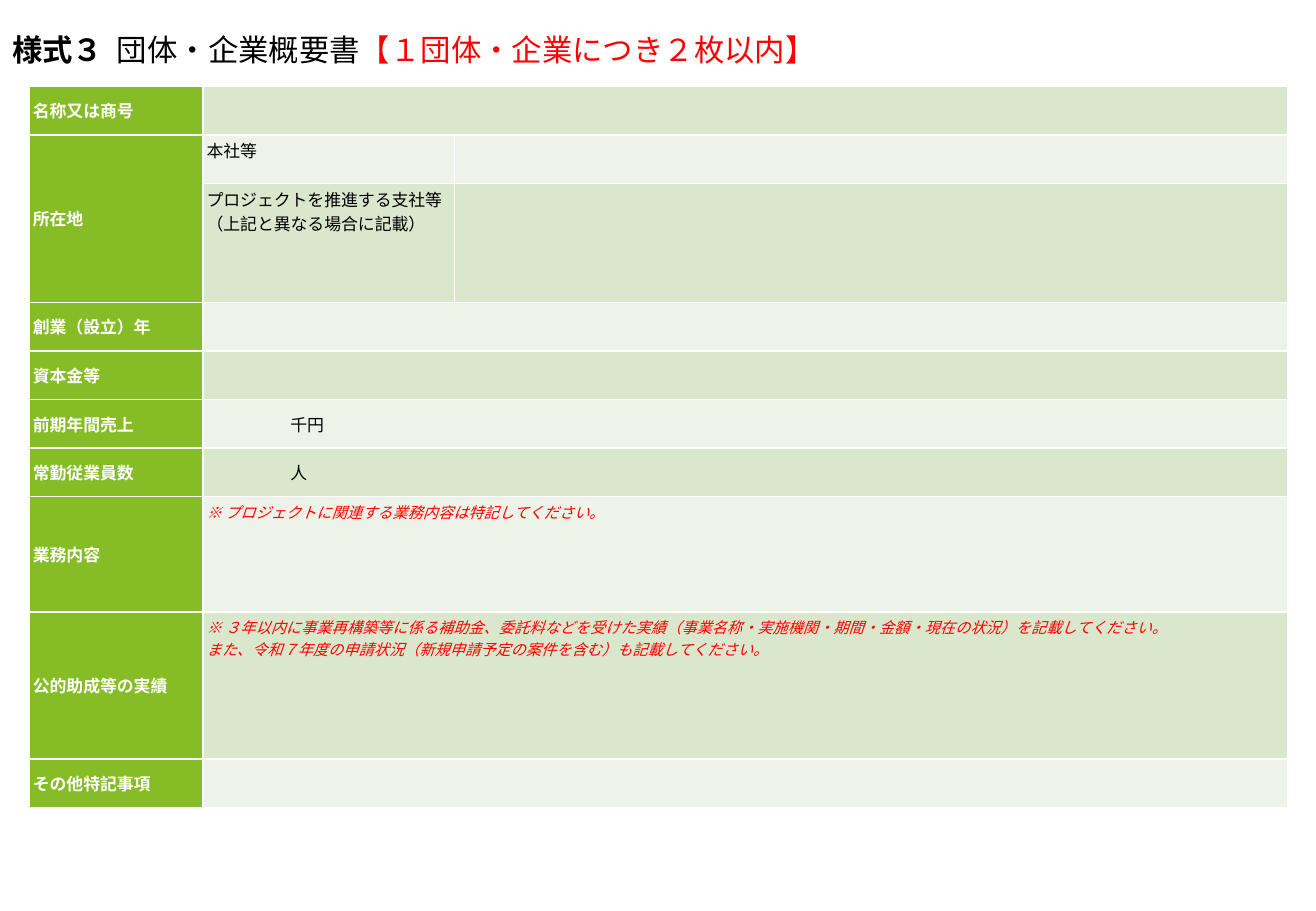
from lxml import etree
from pptx import Presentation
from pptx.dml.color import RGBColor
from pptx.enum.text import MSO_ANCHOR, PP_ALIGN
from pptx.oxml.ns import qn
from pptx.util import Inches, Pt

TOP, MIDDLE, BOTTOM = MSO_ANCHOR.TOP, MSO_ANCHOR.MIDDLE, MSO_ANCHOR.BOTTOM
LEFT, JUSTIFY = PP_ALIGN.LEFT, PP_ALIGN.JUSTIFY

FONT = "Noto Sans CJK JP"
BLACK, WHITE, RED, GREEN = "000000", "FFFFFF", "FF0000", "86BC25"
BANDS = ("D9E7CD", "EDF3E8")
COLUMN_WIDTHS = (1.43, 2.07, 6.86)
UNIT_INDENT = 0.69

LABEL = dict(size=10, color=WHITE, bold=True, align=JUSTIFY, anchor=MIDDLE)
PLAIN = dict(size=10, color=BLACK)
UNIT = dict(size=10, color=BLACK, anchor=MIDDLE, indent=UNIT_INDENT)
NOTE = dict(size=9, color=RED, italic=True)

# Row height, label, detail text, detail style
ROWS = (
    (0.4, "名称又は商号", "", PLAIN),
    (0.4, "所在地", "本社等", PLAIN),
    (0.98, "", "プロジェクトを推進する支社等（上記と異なる場合に記載）", PLAIN),
    (0.4, "創業（設立）年", "", PLAIN),
    (0.4, "資本金等", "", PLAIN),
    (0.4, "前期年間売上", "千円", UNIT),
    (0.4, "常勤従業員数", "人", UNIT),
    (0.95, "業務内容", "※ プロジェクトに関連する業務内容は特記してください。", NOTE),
    (1.21, "公的助成等の実績",
     "※ ３年以内に事業再構築等に係る補助金、委託料などを受けた実績"
     "（事業名称・実施機関・期間・金額・現在の状況）を記載してください。\n"
     "また、令和７年度の申請状況（新規申請予定の案件を含む）も記載してください。", NOTE),
    (0.4, "その他特記事項", "", PLAIN),
)
ADDRESS_ROWS = (1, 2)


def rgb(color):
    return RGBColor.from_string(color)


class FormSlide:
    def __init__(self, presentation):
        self.slide = presentation.slides.add_slide(presentation.slide_layouts[6])

    def format_run(self, run, size, color, bold=False, italic=False, spacing=0):
        font = run.font
        font.name, font.size = FONT, Pt(size)
        font.bold, font.italic = bold, italic
        font.color.rgb = rgb(color)
        properties = run._r.get_or_add_rPr()
        etree.SubElement(properties, qn("a:ea"), typeface=FONT)
        if spacing:
            properties.set("spc", str(spacing * 100))

    def add_title(self, left, top, width, height, parts):
        frame = self.slide.shapes.add_textbox(
            Inches(left), Inches(top), Inches(width), Inches(height)).text_frame
        frame.word_wrap = True
        frame.vertical_anchor = BOTTOM
        frame.margin_left = frame.margin_right = 0
        frame.margin_top = frame.margin_bottom = 0
        for text, style in parts:
            run = frame.paragraphs[0].add_run()
            run.text = text
            self.format_run(run, **style)

    def add_borders(self, cell):
        properties = cell._tc.get_or_add_tcPr()
        for side in ("a:lnL", "a:lnR", "a:lnT", "a:lnB"):
            line = etree.SubElement(properties, qn(side), w=str(Pt(1)))
            fill = etree.SubElement(line, qn("a:solidFill"))
            etree.SubElement(fill, qn("a:srgbClr"), val=WHITE)

    def fill_cell(self, cell, fill, text, size, color, align=LEFT, anchor=TOP,
                  indent=0, **style):
        self.add_borders(cell)
        cell.fill.solid()
        cell.fill.fore_color.rgb = rgb(fill)
        cell.margin_left = cell.margin_right = Inches(0.03)
        cell.margin_top = cell.margin_bottom = Inches(0.03)
        cell.vertical_anchor = anchor
        cell.text_frame.text = text
        for paragraph in cell.text_frame.paragraphs:
            paragraph.alignment = align
            if indent:
                paragraph._p.get_or_add_pPr().set("marL", str(Inches(indent)))
            for run in paragraph.runs:
                self.format_run(run, size, color, **style)
            # Keeps empty rows from growing to the default text size
            etree.SubElement(paragraph._p, qn("a:endParaRPr"), sz=str(size * 100))

    def add_form_table(self, left, top):
        heights = [row[0] for row in ROWS]
        table = self.slide.shapes.add_table(
            len(ROWS), len(COLUMN_WIDTHS), Inches(left), Inches(top),
            Inches(sum(COLUMN_WIDTHS)), Inches(sum(heights))).table
        for column, width in zip(table.columns, COLUMN_WIDTHS):
            column.width = Inches(width)
        for index, (height, label, detail, style) in enumerate(ROWS):
            table.rows[index].height = Inches(height)
            band = BANDS[index % 2]
            self.fill_cell(table.cell(index, 0), GREEN, label, **LABEL)
            self.fill_cell(table.cell(index, 1), band, detail, **style)
            self.fill_cell(table.cell(index, 2), band, "", **PLAIN)
            if index not in ADDRESS_ROWS:
                table.cell(index, 1).merge(table.cell(index, 2))
        first, last = ADDRESS_ROWS
        table.cell(first, 0).merge(table.cell(last, 0))


def main():
    presentation = Presentation()
    presentation.slide_width = Inches(10.83)
    presentation.slide_height = Inches(7.5)
    form = FormSlide(presentation)
    form.add_form_table(0.24, 0.71)
    form.add_title(0.1, -0.15, 10.45, 0.71, (
        ("様式３", dict(size=18, color=BLACK, bold=True)),
        (" ", dict(size=18, color=BLACK, bold=True, spacing=4)),
        ("団体・企業概要書", dict(size=18, color=BLACK)),
        ("【１団体・企業につき２枚以内】", dict(size=18, color=RED)),
    ))
    presentation.save("out.pptx")


if __name__ == "__main__":
    main()
